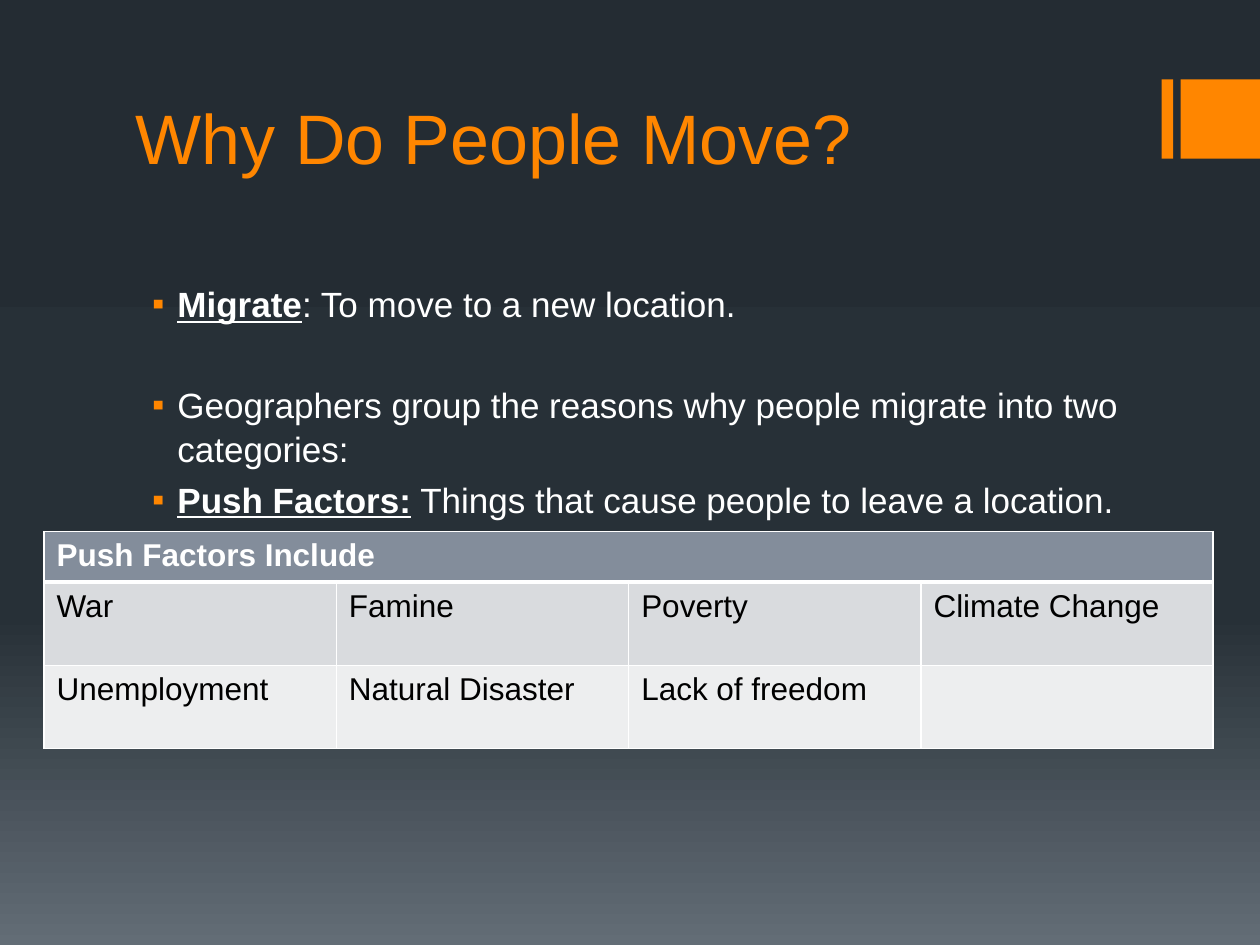
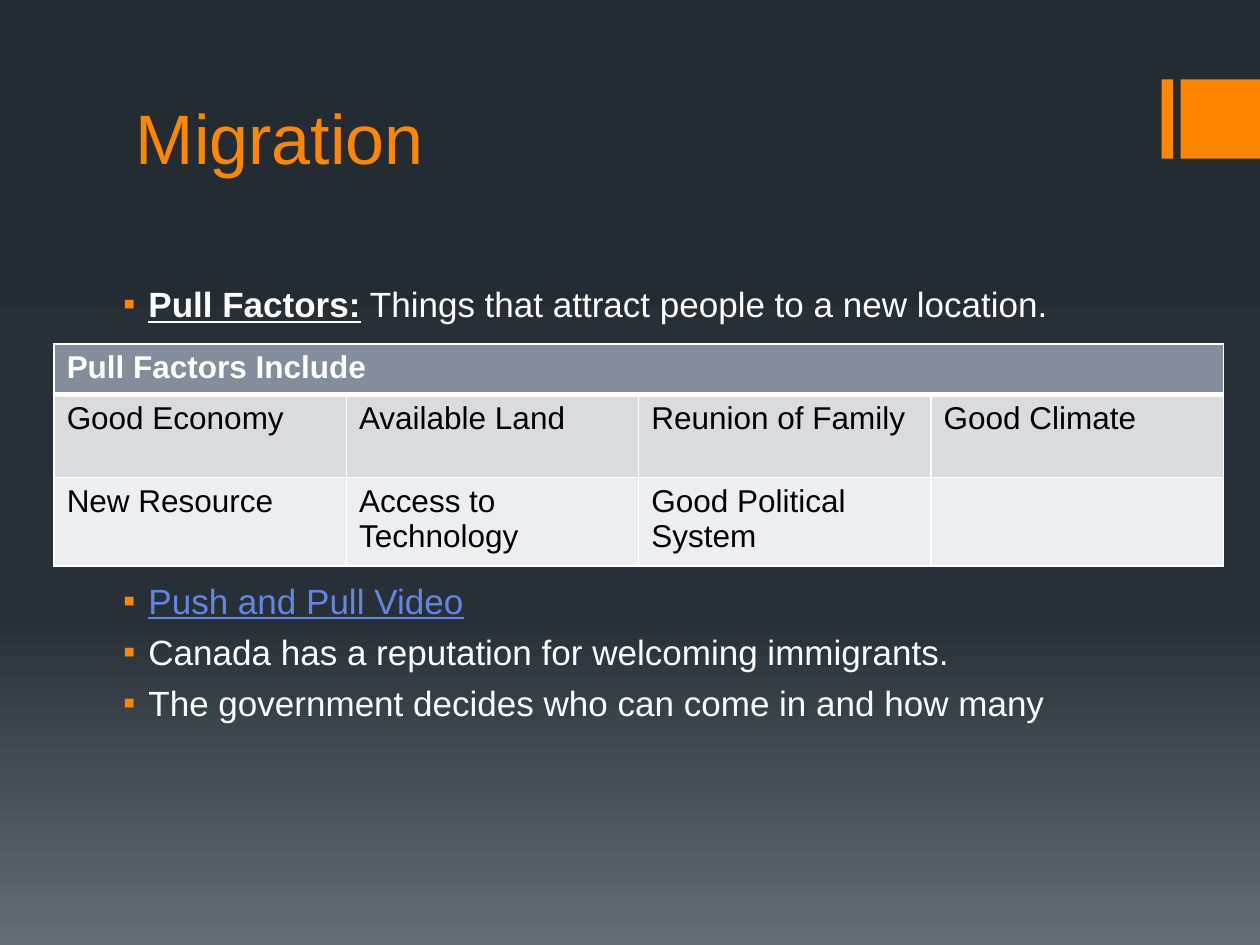
from copy import deepcopy
from dataclasses import dataclass

from lxml import etree
from pptx import Presentation
from pptx import util as u
from pptx.dml.color import RGBColor
from pptx.enum import shapes, text
from pptx.oxml.ns import qn

# Body paragraphs: (blank lines left above, [(words, style), ...])
SLIDES = [
    {
        "title": "Why Do People Move?",
        "body_box": (1.06, 2.18, 8, 4.88),
        "body": [
            (0, [("Migrate", "term"), (": To move to a new location.", "plain")]),
            (1, [("Geographers group the reasons why people migrate into two categories:", "plain")]),
            (0, [("Push Factors:", "term"),
                 (" Things that cause people to leave a location.", "plain")]),
        ],
        "table_at": (0.35, 4.22),
        "table": [
            ["Push Factors Include"],
            ["War", "Famine", "Poverty", "Climate Change"],
            ["Unemployment", "Natural Disaster", "Lack of freedom", ""],
        ],
    },
    {
        "title": "Migration",
        "body_box": (0.83, 2.18, 8, 3.87),
        "body": [
            (0, [("Pull Factors:", "term"),
                 (" Things that attract people to a new location.", "plain")]),
            (5, [("Push and Pull Video", "video")]),
            (0, [("Canada has a reputation for welcoming immigrants.", "plain")]),
            (0, [("The government decides who can come in and how many", "plain")]),
        ],
        "table_at": (0.43, 2.73),
        "table": [
            ["Pull Factors Include"],
            ["Good Economy", "Available Land", "Reunion of Family", "Good Climate"],
            ["New Resource", "Access to Technology", "Good Political System", ""],
        ],
    },
]


@dataclass(frozen=True)
class Theme:
    font: str = "Arial"
    accent: str = "FF8600"
    light: str = "FFFFFF"
    dark: str = "000000"
    video: str = "6187E3"
    row_fills: tuple = ("838D9B", "D9DBDE", "EDEEEF")
    backdrop: tuple = ((0, "242C33"), (0.65, "273037"), (1, "636D76"))
    title_size: int = 40
    body_size: int = 20
    table_size: int = 18
    line_spacing: float = 1.05
    paragraph_gap: int = 4
    blank_line: int = 28


THEME = Theme()
BODY_STYLES = {  # colour, bold, underline
    "plain": (THEME.light, False, False),
    "term": (THEME.light, True, True),
    "video": (THEME.video, False, True),
}
TITLE_BOX = (0.98, 0.21, 8, 1.26)
BAR_TOP, BAR_HEIGHT = 0.63, 0.63
BARS = [(9.22, 0.09), (9.37, 0.63)]  # left, width
COLUMN_WIDTH = 2.32
ROW_HEIGHTS = (0.4, 0.66, 0.66)


def inches(*lengths):
    return [u.Inches(length) for length in lengths]


def add_span(para, words, size, colour, bold=False, underline=False):
    span = para.add_run()
    span.text = words
    font = span.font
    font.name, font.size = THEME.font, u.Pt(size)
    font.bold, font.underline = bold, underline
    font.color.rgb = RGBColor.from_string(colour)


def add_text_frame(page, place):
    frame = page.shapes.add_textbox(*inches(*place)).text_frame
    frame.word_wrap = True
    return frame


def paint_backdrop(master):
    fill = master.background.fill
    fill.gradient()
    fill.gradient_angle = 270
    stop_list = master.element.find(".//" + qn("a:gsLst"))
    stop_list.append(deepcopy(stop_list[0]))
    for stop, (position, colour) in zip(fill.gradient_stops, THEME.backdrop):
        stop.position = position
        stop.color.rgb = RGBColor.from_string(colour)


def add_bars(page):
    for left, width in BARS:
        bar = page.shapes.add_shape(
            shapes.MSO_SHAPE.RECTANGLE, *inches(left, BAR_TOP, width, BAR_HEIGHT))
        bar.shadow.inherit = False
        bar.fill.solid()
        bar.fill.fore_color.rgb = RGBColor.from_string(THEME.accent)
        bar.line.fill.background()


def add_title(page, words):
    frame = add_text_frame(page, TITLE_BOX)
    frame.vertical_anchor = text.MSO_ANCHOR.BOTTOM
    add_span(frame.paragraphs[0], words, THEME.title_size, THEME.accent)


def set_bullet(para):
    properties = para._p.get_or_add_pPr()
    properties.set("marL", str(u.Inches(0.25)))
    properties.set("indent", str(u.Inches(-0.2)))
    colour = etree.SubElement(properties, qn("a:buClr"))
    etree.SubElement(colour, qn("a:srgbClr"), val=THEME.accent)
    etree.SubElement(properties, qn("a:buFont"), typeface=THEME.font)
    etree.SubElement(properties, qn("a:buChar"), char="▪")


def add_body(page, place, paragraphs):
    frame = add_text_frame(page, place)
    for index, (blank_lines, spans) in enumerate(paragraphs):
        para = frame.add_paragraph() if index else frame.paragraphs[0]
        gap = THEME.paragraph_gap + blank_lines * THEME.blank_line
        para.line_spacing = THEME.line_spacing
        para.space_before = u.Pt(gap if index else 0)
        set_bullet(para)
        for words, style in spans:
            add_span(para, words, THEME.body_size, *BODY_STYLES[style])


def set_borders(cell, **widths):
    """Draw the cell's sides, given as L, R, T and B widths in points."""
    properties = cell._tc.get_or_add_tcPr()
    for index, (side, width) in enumerate(widths.items()):
        border = etree.Element(qn(f"a:ln{side}"), w=str(u.Pt(width)))
        fill = etree.SubElement(border, qn("a:solidFill"))
        etree.SubElement(fill, qn("a:srgbClr"), val=THEME.light)
        properties.insert(index, border)


def add_factor_table(page, corner, rows):
    columns = len(rows[-1])
    size = (columns * COLUMN_WIDTH, sum(ROW_HEIGHTS))
    table = page.shapes.add_table(len(rows), columns, *inches(*corner, *size)).table
    for column in table.columns:
        column.width = u.Inches(COLUMN_WIDTH)
    for row, height in zip(table.rows, ROW_HEIGHTS):
        row.height = u.Inches(height)
    table.cell(0, 0).merge(table.cell(0, columns - 1))

    for r, (row, fill) in enumerate(zip(table.rows, THEME.row_fills)):
        heading = r == 0
        for cell in row.cells:
            cell.fill.solid()
            cell.fill.fore_color.rgb = RGBColor.from_string(fill)
            set_borders(cell, L=1, R=1, T=3 if r == 1 else 1, B=3 if heading else 1)
        for cell, words in zip(row.cells, rows[r]):
            if words:
                add_span(cell.text_frame.paragraphs[0], words, THEME.table_size,
                         THEME.light if heading else THEME.dark, bold=heading)


def main():
    deck = Presentation()
    deck.slide_width, deck.slide_height = inches(10, 7.5)
    paint_backdrop(deck.slide_master)
    for content in SLIDES:
        page = deck.slides.add_slide(deck.slide_layouts[6])
        add_bars(page)
        add_title(page, content["title"])
        add_body(page, content["body_box"], content["body"])
        add_factor_table(page, content["table_at"], content["table"])
    deck.save("out.pptx")


if __name__ == "__main__":
    main()
